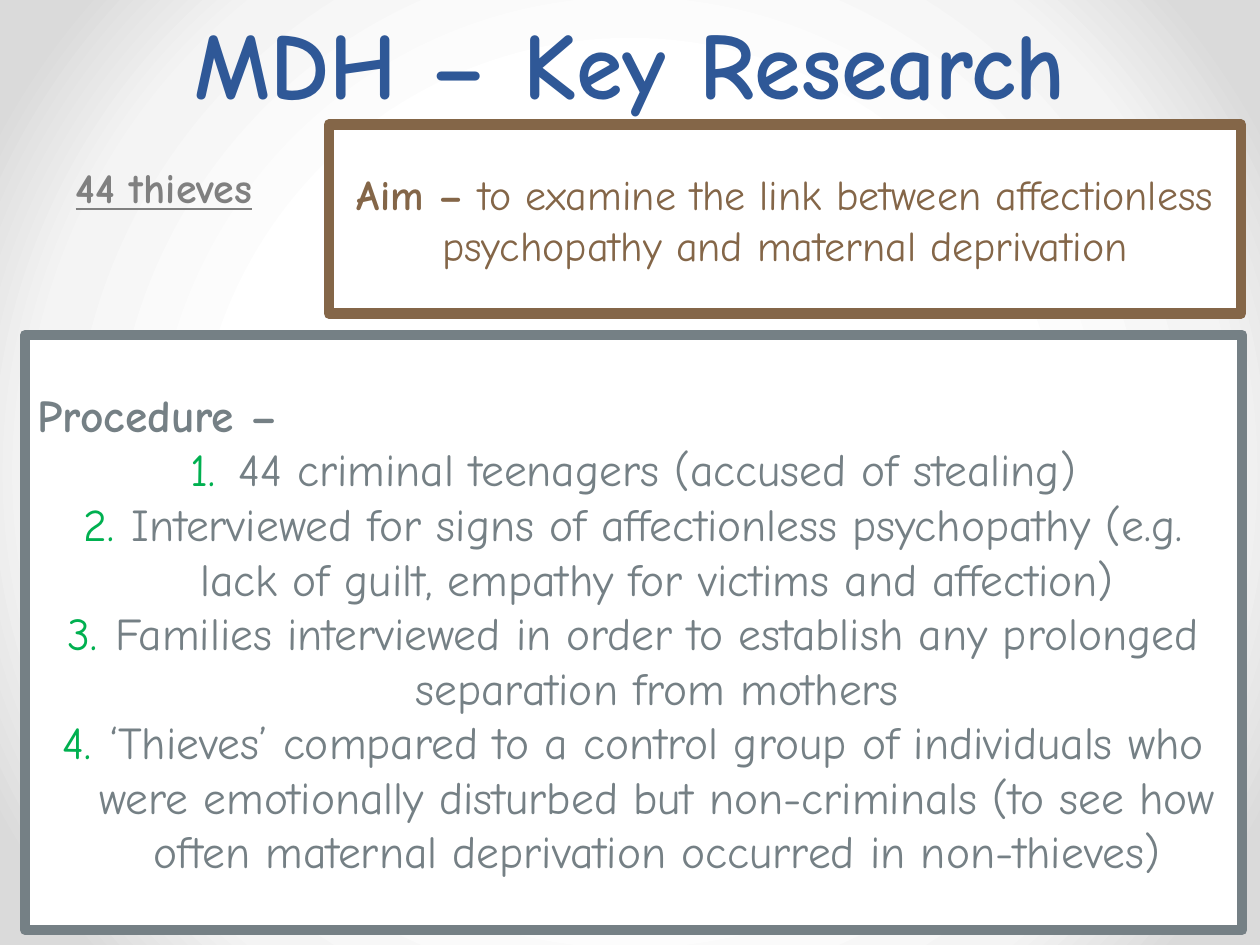
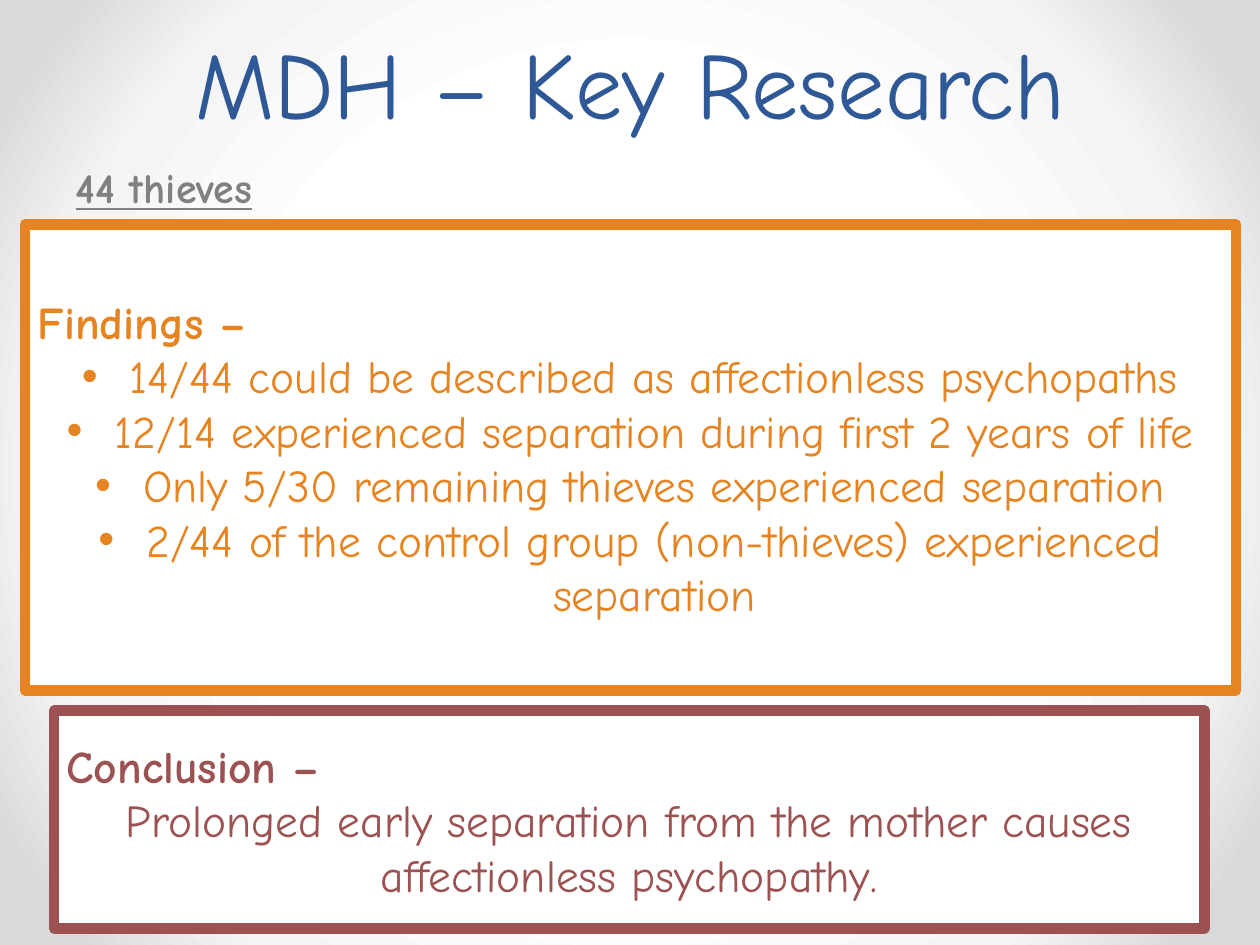
import lxml.etree
import pptx
import pptx.dml.color
import pptx.enum.shapes
import pptx.enum.text
import pptx.oxml
import pptx.oxml.ns
import pptx.util

Pt = pptx.util.Pt
ALIGN = pptx.enum.text.PP_ALIGN
MIDDLE = pptx.enum.text.MSO_ANCHOR.MIDDLE
NO_AUTOFIT = pptx.enum.text.MSO_AUTO_SIZE.NONE
qn = pptx.oxml.ns.qn

FONT = "Comic Neue"
COLOURS = {
    "title": "2F5897", "study": "808080", "panel": "FFFFFF",
    "aim": "846648", "procedure": "758085", "number": "00B050",
    "findings": "E68422", "conclusion": "9C5252",
}
BACKGROUND_STOPS = [(50, "FFFFFF"), (76, "F4F4F4"), (92, "DADADA")]
HANGING = pptx.util.Inches(0.38)

deck = pptx.Presentation()
deck.slide_width = pptx.util.Inches(10)
deck.slide_height = pptx.util.Inches(7.5)


def share(left, top, width, height):
    """Turn percentages of the slide's size into lengths."""
    across, down = deck.slide_width / 100, deck.slide_height / 100
    return [round(n) for n in (left * across, top * down, width * across, height * down)]


def format_paragraph(paragraph, size, colour, bold, align, bullet=None):
    """Set alignment, bullet and font; bullet is None, "none", "number" or "dot"."""
    paragraph.alignment = align
    properties = paragraph.font._element.getparent()
    if bullet:
        hanging = 0 if bullet == "none" else HANGING
        properties.set("marL", str(hanging))
        properties.set("indent", str(-hanging))
        marks = {
            "none": [("buNone", {})],
            "number": [("buClr", {}), ("buAutoNum", {"type": "arabicPeriod"})],
            "dot": [("buFont", {"typeface": "Arial"}), ("buChar", {"char": "•"})],
        }[bullet]
        defaults = properties.find(qn("a:defRPr"))
        for tag, attributes in marks:
            mark = lxml.etree.Element(qn("a:" + tag), attributes)
            if tag == "buClr":
                lxml.etree.SubElement(mark, qn("a:srgbClr"), val=COLOURS["number"])
            defaults.addprevious(mark)
    font = paragraph.font
    font.name, font.size, font.bold = FONT, Pt(size), bold
    font.color.rgb = pptx.dml.color.RGBColor.from_string(COLOURS[colour])


# Shared background: circular grey gradient on the master
master = deck.slide_master
master.background.fill.solid()
plain_fill = master.element.find(".//" + qn("p:bgPr")).find(qn("a:solidFill"))
stops = "".join(
    f'<a:gs pos="{position * 1000}"><a:srgbClr val="{colour}"/></a:gs>'
    for position, colour in BACKGROUND_STOPS
)
gradient = pptx.oxml.parse_xml(
    f'<a:gradFill xmlns:a="http://schemas.openxmlformats.org/drawingml/2006/main" rotWithShape="1">'
    f'<a:gsLst>{stops}</a:gsLst><a:path path="circle">'
    f'<a:fillToRect l="50000" t="50000" r="50000" b="50000"/></a:path></a:gradFill>'
)
plain_fill.getparent().replace(plain_fill, gradient)

# Content: panels are (colour, place in percent, size, heading, lines, bullet)
AIM = "to examine the link between affectionless psychopathy and maternal deprivation"
PROCEDURE = [
    "44 criminal teenagers (accused of stealing)",
    "Interviewed for signs of affectionless psychopathy (e.g. lack of guilt, "
    "empathy for victims and affection)",
    "Families interviewed in order to establish any prolonged separation from mothers",
    "‘Thieves’ compared to a control group of individuals who were emotionally disturbed "
    "but non-criminals (to see how often maternal deprivation occurred in non-thieves)",
]
FINDINGS = [
    "14/44 could be described as affectionless psychopaths",
    "12/14 experienced separation during first 2 years of life",
    "Only 5/30 remaining thieves experienced separation",
    "2/44 of the control group (non-thieves) experienced separation",
]
CONCLUSION = ["Prolonged early separation from the mother causes affectionless psychopathy."]

SLIDES = [
    {"title_height": 13.2, "title_bold": True, "panels": [
        ("aim", (26.1, 13.2, 72.4, 20), 24, "Aim –", [AIM], "inline"),
        ("procedure", (2, 35.47, 96.6, 62.93), 26, "Procedure –", PROCEDURE, "number"),
    ]},
    {"title_height": 15.33, "title_bold": False, "panels": [
        ("findings", (2, 23.73, 96.1, 49.33), 26, "Findings –", FINDINGS, "dot"),
        ("conclusion", (4.3, 75.2, 91.3, 23.07), 26, "Conclusion –", CONCLUSION, None),
    ]},
]

for content in SLIDES:
    slide = deck.slides.add_slide(deck.slide_layouts[1])

    # Title
    title = slide.shapes.title
    title.left, title.top, title.width, title.height = share(5, 0, 90, content["title_height"])
    title.text_frame.text = "MDH – Key Research"
    title.text_frame.auto_size = NO_AUTOFIT
    title.text_frame.vertical_anchor = pptx.enum.text.MSO_ANCHOR.BOTTOM
    heading = title.text_frame.paragraphs[0]
    heading.line_spacing = Pt(58)
    format_paragraph(heading, 54, "title", content["title_bold"], ALIGN.CENTER)

    # Name of the study
    study = slide.placeholders[1]
    study.left, study.top, study.width, study.height = share(5, 16.4, 90, 66)
    study.text_frame.text = "44 thieves"
    study.text_frame.auto_size = NO_AUTOFIT
    study_name = study.text_frame.paragraphs[0]
    study_name.space_before = Pt(4.8)
    format_paragraph(study_name, 24, "study", True, ALIGN.LEFT, "none")
    study_name.font.underline = True

    # Framed panels
    for colour, place, size, label, lines, bullet in content["panels"]:
        panel = slide.shapes.add_shape(pptx.enum.shapes.MSO_SHAPE.RECTANGLE, *share(*place))
        panel.shadow.inherit = False
        panel.fill.solid()
        panel.fill.fore_color.rgb = pptx.dml.color.RGBColor.from_string(COLOURS["panel"])
        panel.line.color.rgb = pptx.dml.color.RGBColor.from_string(COLOURS[colour])
        panel.line.width = Pt(6)
        lxml.etree.SubElement(panel.line._get_or_add_ln(), qn("a:round"))
        frame = panel.text_frame
        frame.word_wrap = True
        frame.vertical_anchor = MIDDLE

        opening = frame.paragraphs[0]
        if bullet == "inline":
            format_paragraph(opening, size, colour, False, ALIGN.CENTER)
            lead = opening.add_run()
            lead.text = label
            lead.font.bold = True
            opening.add_run().text = " " + lines[0]
            continue
        opening.text = label
        format_paragraph(opening, size, colour, True, ALIGN.LEFT)
        for line in lines:
            point = frame.add_paragraph()
            point.text = line
            format_paragraph(point, size, colour, False, ALIGN.CENTER, bullet)

deck.save("out.pptx")
